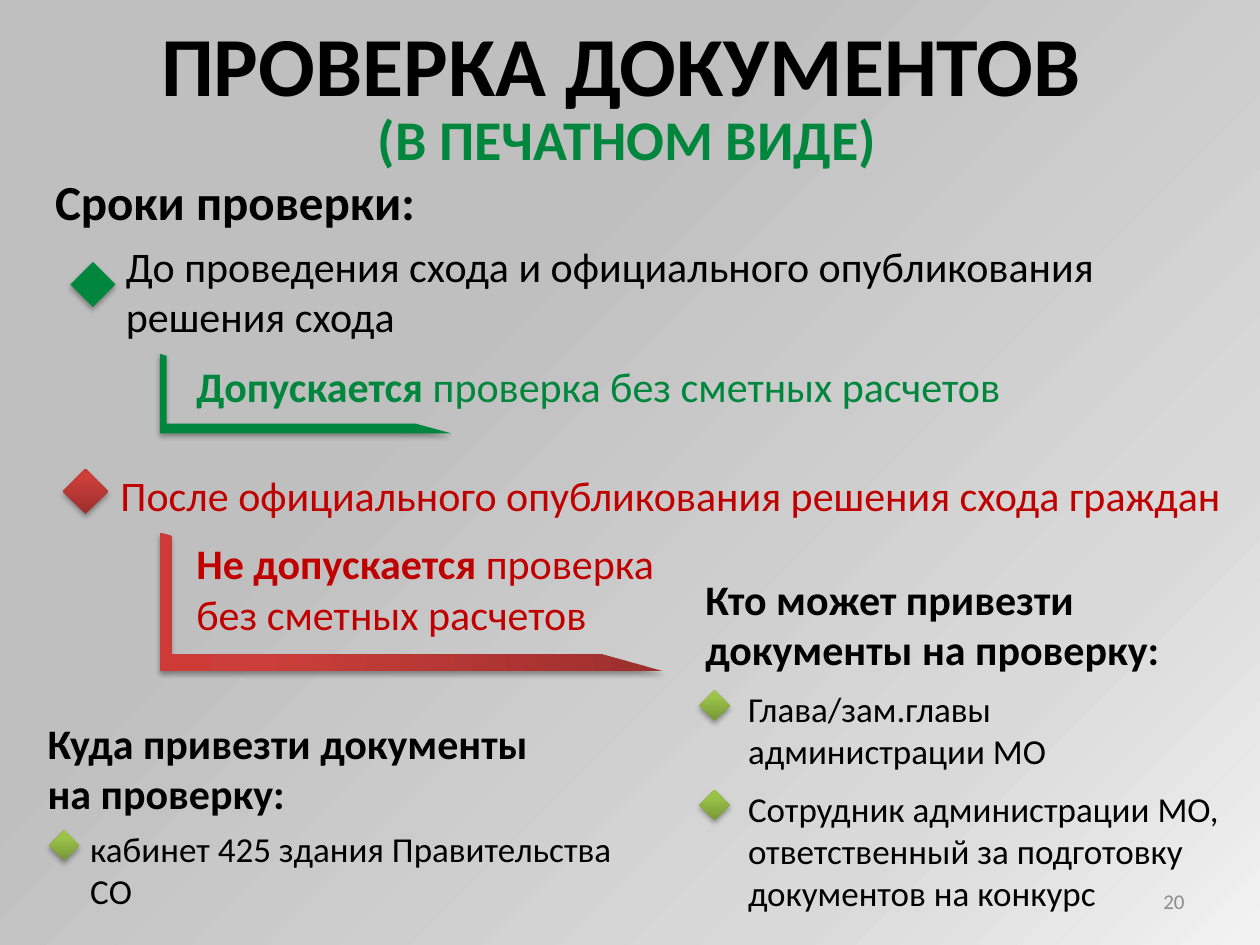
from lxml.etree import SubElement
from pptx import Presentation
from pptx.dml.color import RGBColor
from pptx.enum.shapes import MSO_SHAPE as Shape
from pptx.enum.text import MSO_ANCHOR as Anchor, MSO_AUTO_SIZE as AutoSize, PP_ALIGN as Align
from pptx.oxml.ns import qn
from pptx.util import Cm, Pt

BLACK, GREEN, RED, GREY = "000000", "00863D", "C00000", "8C8C8C"
RED_SHADES = [(0, "9C2F2D"), (80, "CB3E3A"), (100, "CE3B37")]
LIME_SHADES = [(0, "779737"), (80, "9BC348"), (100, "9DC746")]
BACKDROP = [(0, "F2F2F2"), (22, "D9D9D9", 13), (65, "BFBFBF", 28)]


def rgb(value):
    return RGBColor.from_string(value)


def add_node(parent, tag, **attributes):
    return SubElement(parent, qn(tag), {key: str(value) for key, value in attributes.items()})


def add_colour(parent, value, alpha=None):
    colour = add_node(parent, "a:srgbClr", val=value)
    if alpha is not None:
        add_node(colour, "a:alpha", val=alpha * 1000)


def set_gradient(owner, fill, stops):
    """Swap the owner's fill for a gradient without direction and return its node."""
    fill.solid()
    solid = next(owner.element.iter(qn("a:solidFill")))
    gradient = solid.makeelement(qn("a:gradFill"), {"rotWithShape": "1"})
    solid.getparent().replace(solid, gradient)
    stop_list = add_node(gradient, "a:gsLst")
    for position, *colour in stops:
        add_colour(add_node(stop_list, "a:gs", pos=position * 1000), *colour)
    return gradient


def paint_background(slide):
    gradient = set_gradient(slide, slide.background.fill, BACKDROP)
    circle = add_node(gradient, "a:path", path="circle")
    add_node(circle, "a:fillToRect", l=100000, t=100000)


def add_shadow(shape):
    effects = add_node(shape.element.spPr, "a:effectLst")
    shadow = add_node(effects, "a:outerShdw", blurRad=Pt(3.1), dist=Pt(1.8),
                      dir=5400000, rotWithShape=0)
    add_colour(shadow, BLACK, 35)


def add_marker(slide, kind, box, paint):
    """Add a shadowed shape; paint is one colour or a list of gradient stops."""
    marker = slide.shapes.add_shape(kind, *map(Cm, box))
    marker.line.fill.background()
    if isinstance(paint, str):
        marker.fill.solid()
        marker.fill.fore_color.rgb = rgb(paint)
    else:
        add_node(set_gradient(marker, marker.fill, paint), "a:lin", ang=16200000, scaled=0)
    add_shadow(marker)
    return marker


def add_diamond(slide, left, top, side, paint):
    add_marker(slide, Shape.DIAMOND, (left, top, side, side), paint)


def add_corner(slide, box, paint):
    corner = add_marker(slide, Shape.HALF_FRAME, box, paint)
    corner.rotation = 270
    corner.adjustments[0], corner.adjustments[1] = 0.086, 0.123


def write(holder, lines, size, colour, bold=False, align=None, **frame_format):
    """Fill the holder; a line is a string or a list of (text, bold) pairs."""
    frame = holder.text_frame
    settings = {"word_wrap": True, "auto_size": AutoSize.SHAPE_TO_FIT_TEXT,
                "vertical_anchor": Anchor.TOP, **frame_format}
    for name, value in settings.items():
        setattr(frame, name, value)
    for index, line in enumerate(lines):
        paragraph = frame.add_paragraph() if index else frame.paragraphs[0]
        paragraph.alignment = align
        for text, weight in [(line, bold)] if isinstance(line, str) else line:
            run = paragraph.add_run()
            run.text = text
            font = {"name": "Calibri", "size": Pt(size), "bold": weight}
            for name, value in font.items():
                setattr(run.font, name, value)
            run.font.color.rgb = rgb(colour)


def add_text(slide, box, lines, size, colour=BLACK, **options):
    write(slide.shapes.add_textbox(*map(Cm, box)), lines, size, colour, **options)


def add_heading(slide):
    title = slide.shapes.title
    place = {"left": 2.9, "top": 0.13, "width": 19.63, "height": 2.31}
    for name, value in place.items():
        setattr(title, name, Cm(value))
    write(title, ["ПРОВЕРКА ДОКУМЕНТОВ "], 48, BLACK, bold=True,
          align=Align.CENTER, word_wrap=False)
    add_text(slide, (7.37, 1.98, 10.67, 1.63), ["(В ПЕЧАТНОМ ВИДЕ)"], 32, GREEN,
             bold=True, word_wrap=False)


def add_deadlines(slide):
    add_text(slide, (0.86, 3.33, 9.83, 1.45), ["Сроки проверки:"], 28, bold=True)

    add_diamond(slide, 1.42, 5.28, 0.91, GREEN)
    add_text(slide, (2.29, 4.72, 22.81, 2.31),
             ["До проведения схода и официального опубликования решения схода"], 24)
    add_corner(slide, (5.36, 5, 1.6, 5.87), GREEN)
    add_text(slide, (3.71, 7.14, 18.82, 1.27),
             [[("Допускается", True), (" проверка без сметных расчетов", False)]], 24, GREEN)

    add_diamond(slide, 1.27, 9.45, 0.91, RED_SHADES)
    add_text(slide, (2.18, 9.35, 22.91, 1.27),
             ["После официального опубликования решения схода граждан"], 24, RED)
    add_corner(slide, (6.91, 7.06, 2.79, 10.16), RED_SHADES)
    add_text(slide, (3.71, 10.72, 10.16, 2.31),
             [[("Не допускается", True), (" проверка", False)], "без сметных расчетов"], 24, RED)


def add_delivery(slide):
    questions = [
        ((0.71, 14.33, 12.19, 2.31), ["Куда привезти документы", "на проверку:"]),
        ((13.97, 11.43, 10.16, 2.31), ["Кто может привезти", "документы на проверку:"]),
    ]
    for box, lines in questions:
        add_text(slide, box, lines, 24, bold=True)

    answers = [
        (0.99, (1.57, 16.56, 11.33, 1.96), ["кабинет 425 здания Правительства СО"]),
        (14.1, (14.83, 13.74, 9.86, 1.96), ["Глава/зам.главы", "администрации МО"]),
        (14.1, (14.83, 15.75, 10.9, 2.82),
         ["Сотрудник администрации МО, ответственный за подготовку документов на конкурс"]),
    ]
    for diamond_left, box, lines in answers:
        add_diamond(slide, diamond_left, box[1] + 0.18, 0.61, LIME_SHADES)
        add_text(slide, box, lines, 20)


def main():
    deck = Presentation()
    deck.slide_width, deck.slide_height = Cm(25.4), Cm(19.05)
    slide = deck.slides.add_slide(deck.slide_layouts[5])
    paint_background(slide)
    add_heading(slide)
    add_deadlines(slide)
    add_delivery(slide)
    add_text(slide, (18.21, 17.65, 5.92, 1.02), ["20"], 12, GREY, align=Align.RIGHT,
             auto_size=AutoSize.NONE, vertical_anchor=Anchor.MIDDLE)
    deck.save("out.pptx")


if __name__ == "__main__":
    main()
